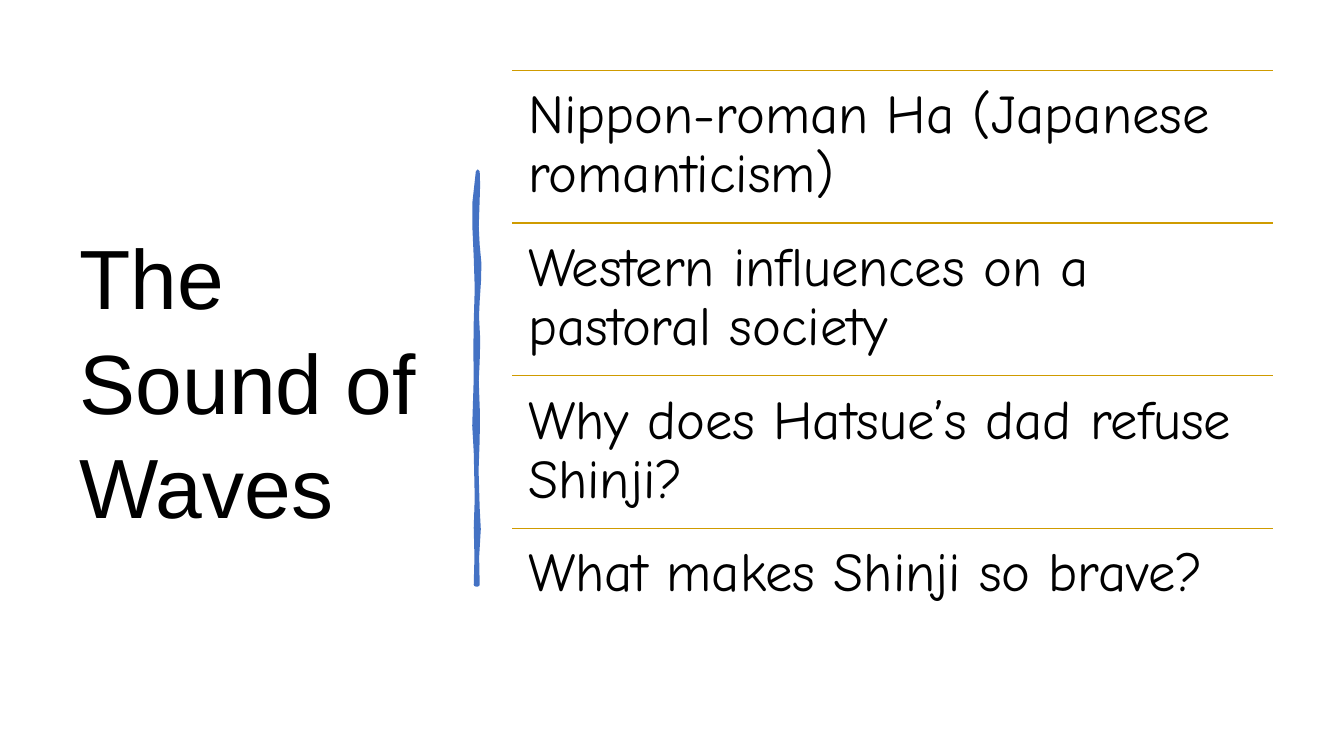
from pptx import Presentation
from pptx.dml.color import RGBColor
from pptx.enum import shapes, text
from pptx.oxml.ns import qn
from pptx.util import Pt
from lxml import etree

# Content
TITLE = "The Sound of Waves"
TOPICS = [
    "Nippon-roman Ha (Japanese romanticism)",
    "Western influences on a pastoral society",
    "Why does Hatsue’s dad refuse Shinji?",
    "What makes Shinji so brave?",
]
COLORS = {"background": "FFFFFF", "text": "000000", "stroke": "4472C4", "rule": "CF9B00"}

# Hand-drawn stroke: outline down the right side, then up the left
STROKE_RIGHT = [(341.3, 122.4), (341.6, 132), (341.2, 145), (340.6, 162), (341.3, 175),
                (342.5, 188), (342.3, 200), (341.3, 215), (340.8, 226), (341.7, 243),
                (341.3, 258), (340.6, 272), (341.5, 296), (341.3, 314), (340.5, 336),
                (341.3, 363), (342.1, 378), (340.9, 398), (341.3, 417.6)]
STROKE_LEFT = [(339.8, 417.6), (340.3, 398), (339.8, 377), (340.5, 356), (339.8, 323),
               (338.7, 304), (339.8, 270), (339.5, 250), (339.8, 230), (340.5, 206),
               (339.8, 184), (338.8, 162), (338.8, 145)]

# Layout
TOPIC_LEFT, TOPIC_TOP = 365.75, 50.4
TOPIC_WIDTH, TOPIC_PITCH = 543.6, 109
INSET = 11.5


def color(name):
    return RGBColor.from_string(COLORS[name])


def style_text(paragraph, font, size):
    paragraph.font.name = font
    paragraph.font.size = Pt(size)
    paragraph.font.color.rgb = color("text")


def add_rule(slide, top):
    rule = slide.shapes.add_connector(
        shapes.MSO_CONNECTOR.STRAIGHT,
        Pt(TOPIC_LEFT), Pt(top), Pt(TOPIC_LEFT + TOPIC_WIDTH), Pt(top))
    rule.line.color.rgb = color("rule")
    rule.line.width = Pt(1)
    etree.SubElement(rule._element.spPr, qn("a:effectLst"))


def add_topic(slide, topic, top):
    box = slide.shapes.add_textbox(
        Pt(TOPIC_LEFT), Pt(top), Pt(TOPIC_WIDTH), Pt(TOPIC_PITCH))
    frame = box.text_frame
    frame.word_wrap = True
    frame.margin_left = frame.margin_right = Pt(INSET)
    frame.margin_top = frame.margin_bottom = Pt(INSET)
    frame.text = topic
    frame.paragraphs[0].line_spacing = 0.9
    style_text(frame.paragraphs[0], "Comic Neue", 39)


def main():
    prs = Presentation()
    prs.slide_width, prs.slide_height = Pt(960), Pt(540)
    slide = prs.slides.add_slide(prs.slide_layouts[5])
    slide.background.fill.solid()
    slide.background.fill.fore_color.rgb = color("background")

    # Title
    title = slide.shapes.title
    title.left, title.top, title.width, title.height = Pt(49.7), Pt(50.4), Pt(269.3), Pt(440)
    title.text_frame.text = TITLE
    title.text_frame.word_wrap = True
    title.text_frame.auto_size = text.MSO_AUTO_SIZE.NONE
    title.text_frame.vertical_anchor = text.MSO_ANCHOR.MIDDLE
    heading = title.text_frame.paragraphs[0]
    heading.alignment = text.PP_ALIGN.LEFT
    heading.line_spacing = 1.04
    style_text(heading, "Arial", 60)

    # Vertical stroke
    start, *outline = STROKE_RIGHT + STROKE_LEFT
    builder = slide.shapes.build_freeform(Pt(start[0]), Pt(start[1]))
    builder.add_line_segments([(Pt(x), Pt(y)) for x, y in outline], close=True)
    stroke = builder.convert_to_shape()
    stroke.shadow.inherit = False
    stroke.fill.solid()
    stroke.fill.fore_color.rgb = color("stroke")
    stroke.line.color.rgb = color("stroke")
    stroke.line.width = Pt(2.75)

    # Topics, each under its rule
    for row, topic in enumerate(TOPICS):
        top = TOPIC_TOP + row * TOPIC_PITCH
        add_rule(slide, top)
        add_topic(slide, topic, top)

    prs.save("out.pptx")


if __name__ == "__main__":
    main()
